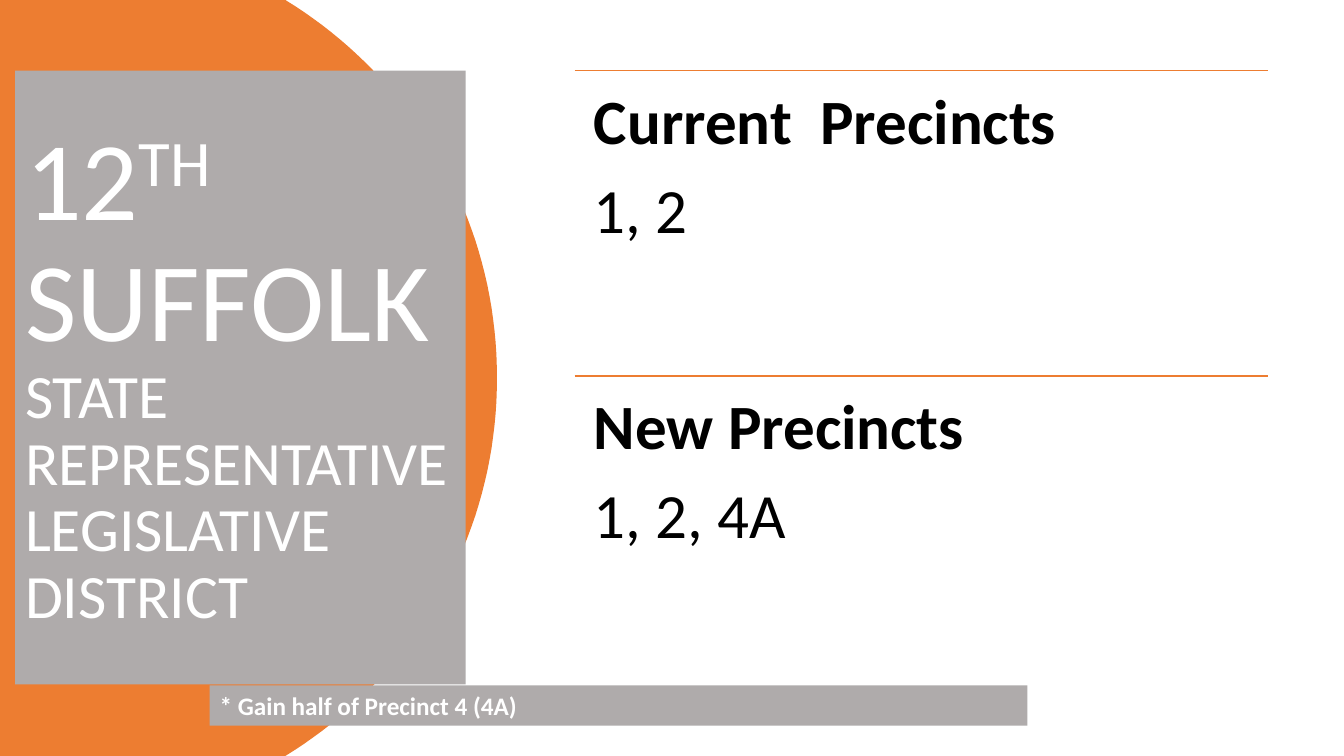
from dataclasses import dataclass

from lxml import etree
from pptx import Presentation
from pptx.dml.color import RGBColor
from pptx.enum.shapes import MSO_CONNECTOR, MSO_SHAPE
from pptx.enum.text import MSO_ANCHOR, PP_ALIGN
from pptx.oxml.ns import qn
from pptx.util import Inches, Pt

STRAIGHT = MSO_CONNECTOR.STRAIGHT
RECTANGLE = MSO_SHAPE.RECTANGLE
MIDDLE = MSO_ANCHOR.MIDDLE
TOP = MSO_ANCHOR.TOP
LEFT = PP_ALIGN.LEFT


@dataclass(frozen=True)
class Theme:
    """Colours, font and type sizes of the slide."""

    orange: RGBColor = RGBColor(0xED, 0x7D, 0x31)
    gray: RGBColor = RGBColor(0xAF, 0xAB, 0xAB)
    white: RGBColor = RGBColor(0xFF, 0xFF, 0xFF)
    black: RGBColor = RGBColor(0x00, 0x00, 0x00)
    font: str = "Calibri"
    district: int = 80
    office: int = 44
    precincts: int = 45
    note: int = 18


THEME = Theme()
SLIDE_WIDTH, SLIDE_HEIGHT = 13.33, 7.5
LIST_LEFT, LIST_WIDTH = 5.7, 6.88
LIST_TOP, LIST_HEIGHT = 0.7, 3.03
SECTIONS = [("Current  Precincts", "1, 2"), ("New Precincts", "1, 2, 4A")]


def add_run(paragraph, text, size, color, bold=False, baseline=0):
    """Add a styled run, raised by a baseline percentage if given."""
    run = paragraph.add_run()
    run.text = text
    run.font.name = THEME.font
    run.font.size = Pt(size)
    run.font.bold = bold
    run.font.color.rgb = color
    if baseline:
        run._r.get_or_add_rPr().set("baseline", str(baseline * 1000))


def style_shape(shape, color):
    """Give a shape a plain fill without outline or shadow."""
    shape.shadow.inherit = False
    shape.fill.solid()
    shape.fill.fore_color.rgb = color
    shape.line.fill.background()


def curve_points(start, control_1, control_2, end, steps=40):
    """Return points along a cubic curve, both ends included."""
    points = []
    for step in range(steps + 1):
        t = step / steps
        weights = ((1 - t) ** 3, 3 * t * (1 - t) ** 2, 3 * t**2 * (1 - t), t**3)
        corners = (start, control_1, control_2, end)
        points.append(tuple(
            sum(weight * corner[axis] for weight, corner in zip(weights, corners))
            for axis in (0, 1)
        ))
    return points


def add_round_backdrop(slide):
    """Draw the orange backdrop with its rounded right side."""
    upper = curve_points((2.83, 0), (4.09, 0.77), (4.93, 2.16), (4.93, 3.75))
    lower = [(x, SLIDE_HEIGHT - y) for x, y in reversed(upper[:-1])]
    outline = upper + lower + [(0, SLIDE_HEIGHT)]
    builder = slide.shapes.build_freeform(0, 0, scale=Inches(1) / 1000)
    builder.add_line_segments([(x * 1000, y * 1000) for x, y in outline])
    style_shape(builder.convert_to_shape(), THEME.orange)


def add_panel(slide, left, top, width, height):
    """Add a gray panel and return its left-aligned first paragraph."""
    shape = slide.shapes.add_shape(
        RECTANGLE, Inches(left), Inches(top), Inches(width), Inches(height)
    )
    style_shape(shape, THEME.gray)
    frame = shape.text_frame
    frame.word_wrap = True
    frame.vertical_anchor = MIDDLE
    paragraph = frame.paragraphs[0]
    paragraph.alignment = LEFT
    return paragraph


def add_rule(slide, left, top, width):
    """Add a thin orange horizontal rule."""
    rule = slide.shapes.add_connector(
        STRAIGHT, Inches(left), Inches(top), Inches(left + width), Inches(top)
    )
    rule.line.color.rgb = THEME.orange
    rule.line.width = Pt(1)
    etree.SubElement(rule._element.spPr, qn("a:effectLst"))


def add_section(slide, top, heading, precincts):
    """Add a ruled section with a bold heading and its precincts."""
    add_rule(slide, LIST_LEFT, top, LIST_WIDTH)
    box = slide.shapes.add_textbox(
        Inches(LIST_LEFT), Inches(top), Inches(LIST_WIDTH), Inches(LIST_HEIGHT)
    )
    frame = box.text_frame
    frame.word_wrap = True
    frame.vertical_anchor = TOP
    frame.margin_left = frame.margin_right = Inches(0.19)
    frame.margin_top = frame.margin_bottom = Inches(0.19)
    lines = (frame.paragraphs[0], heading, True), (frame.add_paragraph(), precincts, False)
    for paragraph, text, bold in lines:
        paragraph.line_spacing = 0.9
        paragraph.space_after = Pt(15)
        add_run(paragraph, text, THEME.precincts, THEME.black, bold)


def add_title(slide):
    """Add the district title panel."""
    title = add_panel(slide, 0.15, 0.7, 4.47, 6.09)
    title.line_spacing = 0.9
    title.space_after = Pt(6)
    add_run(title, "12", THEME.district, THEME.white)
    add_run(title, "TH", THEME.district, THEME.white, baseline=30)
    add_run(title, " SUFFOLK ", THEME.district, THEME.white)
    add_run(title, "STATE REPRESENTATIVE LEGISLATIVE DISTRICT", THEME.office, THEME.white)


def add_note(slide):
    """Add the footnote bar."""
    note = add_panel(slide, 2.08, 6.8, 8.11, 0.4)
    add_run(note, "* Gain half of Precinct 4 (4A)", THEME.note, THEME.white, bold=True)


def main():
    """Build the slide and save it."""
    presentation = Presentation()
    presentation.slide_width = Inches(SLIDE_WIDTH)
    presentation.slide_height = Inches(SLIDE_HEIGHT)
    slide = presentation.slides.add_slide(presentation.slide_layouts[6])
    add_round_backdrop(slide)
    add_title(slide)
    for index, (heading, precincts) in enumerate(SECTIONS):
        add_section(slide, LIST_TOP + index * LIST_HEIGHT, heading, precincts)
    add_note(slide)
    presentation.save("out.pptx")


if __name__ == "__main__":
    main()
